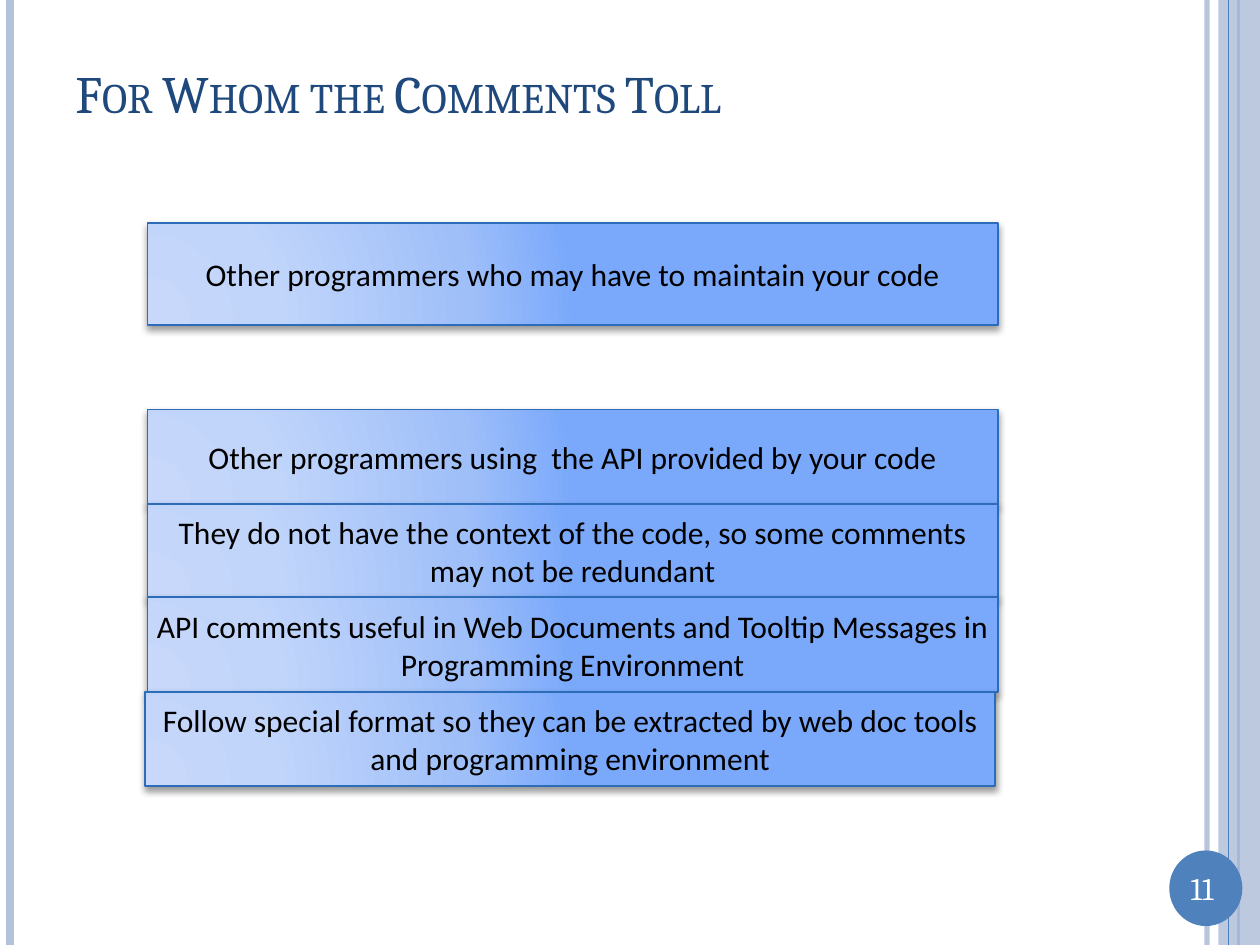
import pptx
import pptx.dml.color
import pptx.enum.shapes
import pptx.enum.text
import pptx.oxml
import pptx.oxml.ns
import pptx.util

Inches = pptx.util.Inches
Pt = pptx.util.Pt
SHAPES = pptx.enum.shapes.MSO_SHAPE
ALIGN = pptx.enum.text.PP_ALIGN
MIDDLE = pptx.enum.text.MSO_ANCHOR.MIDDLE
NS = pptx.oxml.ns.nsdecls("a")
PALE, ACCENT = "B3C1DB", "4F81BD"


def rgb(color):
    return pptx.dml.color.RGBColor.from_string(color)


def write(shape, text, size, font, color, align):
    """Set one paragraph of formatted text and return its run."""
    frame = shape.text_frame
    frame.word_wrap = True
    frame.text = text
    paragraph = frame.paragraphs[0]
    paragraph.alignment = align
    run = paragraph.runs[0]
    run.font.size = Pt(size)
    run.font.name = font
    run.font.color.rgb = rgb(color)
    return run


prs = pptx.Presentation()
prs.slide_width = Inches(10)
prs.slide_height = Inches(7.5)
slide = prs.slides.add_slide(prs.slide_layouts[6])
shapes = slide.shapes

# Vertical rules, side band and page badge, from back to front
rules = [(9.58, PALE, 3), (0.08, PALE, 4.5), (9.83, ACCENT, 1.5), (9.75, ACCENT, 0.75)]
decorations = [
    (SHAPES.RECTANGLE, (9.67, 0, 0.33, 7.5), PALE, 87),
    (SHAPES.OVAL, (9.28, 6.75, 0.58, 0.6), ACCENT, 100),
]


for index, (x, color, width) in enumerate(rules):
    if index == 3:
        preset, box, fill, opacity = decorations[0]
        band = shapes.add_shape(preset, *map(Inches, box))
        band.shadow.inherit = False
        band.fill.solid()
        band.fill.fore_color.rgb = rgb(fill)
        band.line.fill.background()
        band_color = band._element.spPr.xpath("./a:solidFill/a:srgbClr")[0]
        band_color.append(pptx.oxml.parse_xml(f'<a:alpha {NS} val="{opacity * 1000}"/>'))
    rule = shapes.add_connector(
        pptx.enum.shapes.MSO_CONNECTOR.STRAIGHT, Inches(x), 0, Inches(x), Inches(7.5))
    rule.line.color.rgb = rgb(color)
    rule.line.width = Pt(width)
    rule._element.spPr.append(pptx.oxml.parse_xml(f"<a:effectLst {NS}/>"))
    if index == 0:
        rule_color = rule._element.spPr.xpath("./a:ln/a:solidFill/a:srgbClr")[0]
        rule_color.append(pptx.oxml.parse_xml(f'<a:alpha {NS} val="93000"/>'))

preset, box, fill, opacity = decorations[1]
badge = shapes.add_shape(preset, *map(Inches, box))
badge.shadow.inherit = False
badge.fill.solid()
badge.fill.fore_color.rgb = rgb(fill)
badge.line.fill.background()

page_number = shapes.add_textbox(Inches(9.25), Inches(6.85), Inches(0.58), Inches(0.4))
write(page_number, "11", 18, "Cambria", "FFFFFF", ALIGN.CENTER)

title = shapes.add_textbox(Inches(0.5), Inches(0.3), Inches(8.67), Inches(0.87))
title.text_frame.vertical_anchor = MIDDLE
title_run = write(title, "For Whom the Comments Toll", 30, "Cambria", "1F497D", ALIGN.LEFT)
title_run.font._element.set("cap", "small")

# Audience boxes
stops = "".join(
    f'<a:gs pos="{position * 1000}"><a:srgbClr val="{color}"/></a:gs>'
    for position, color in [(0, "C7D8FB"), (30, "C1D5FA"), (75, "9FBFF9"), (100, "7AA9FB")])
gradient = (
    f'<a:gradFill {NS} rotWithShape="1"><a:gsLst>{stops}</a:gsLst><a:path path="circle">'
    '<a:fillToRect l="5000" t="100000" r="120000" b="10000"/></a:path></a:gradFill>')
shadow = (
    f'<a:outerShdw {NS} blurRad="{Pt(4)}" dist="{Pt(2)}" dir="5400000" rotWithShape="0">'
    '<a:srgbClr val="000000"><a:alpha val="40000"/></a:srgbClr></a:outerShdw>')

audiences = [
    (1.17, 1.77, 0.81, "Other programmers who may have to maintain your code"),
    (1.17, 3.25, 0.75, "Other programmers using  the API provided by your code"),
    (1.17, 4, 0.75, "They do not have the context of the code, so some comments may not be redundant"),
    (1.17, 4.74, 0.75, "API comments useful in Web Documents and Tooltip Messages in Programming Environment"),
    (1.15, 5.49, 0.75, "Follow special format so they can be extracted by web doc tools "
                       "and programming environment"),
]
for left, top, height, text in audiences:
    audience = shapes.add_shape(
        SHAPES.RECTANGLE, Inches(left), Inches(top), Inches(6.75), Inches(height))
    audience.line.color.rgb = rgb("2C6CB9")
    audience.line.width = Pt(1)
    audience.fill.background()
    properties = audience._element.spPr
    properties.replace(properties.xpath("./a:noFill")[0], pptx.oxml.parse_xml(gradient))
    audience.shadow.inherit = False
    properties.xpath("./a:effectLst")[0].append(pptx.oxml.parse_xml(shadow))
    frame = audience.text_frame
    frame.margin_left = frame.margin_right = Inches(0.05)
    frame.margin_top = frame.margin_bottom = Inches(0.05)
    frame.vertical_anchor = MIDDLE
    write(audience, text, 18, "Calibri", "000000", ALIGN.CENTER)

prs.save("out.pptx")
